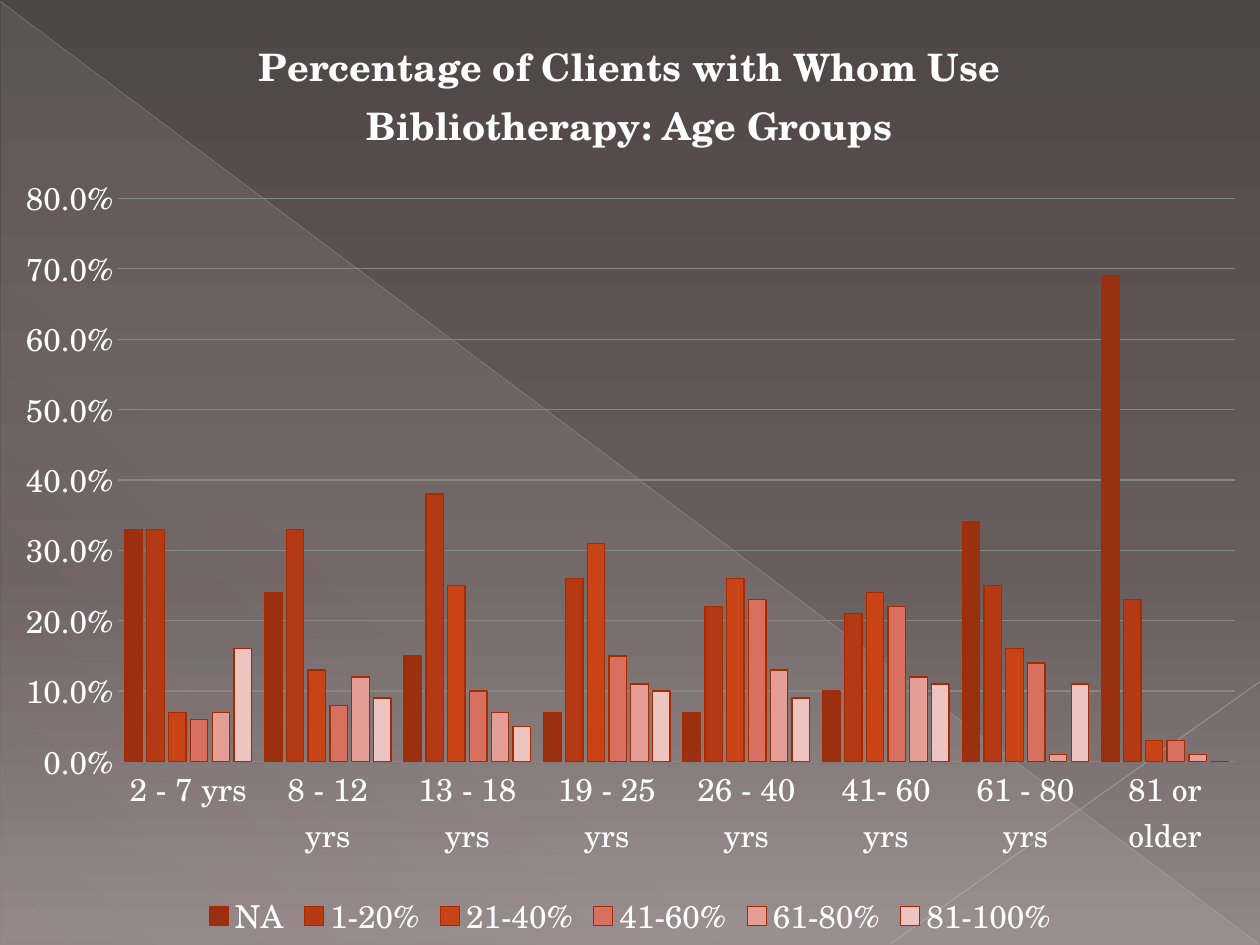
from pptx import Presentation
from pptx.chart.data import CategoryChartData
from pptx.dml.color import RGBColor
from pptx.enum.chart import XL_CHART_TYPE as ChartType, XL_LEGEND_POSITION as LegendPosition, XL_TICK_MARK as TickMark
from pptx.enum.shapes import MSO_CONNECTOR as Connector, MSO_SHAPE as Shape
from pptx.oxml import parse_xml
from pptx.oxml.ns import nsdecls, qn
from pptx.util import Inches, Pt
from lxml.etree import SubElement

FONT = "TeX Gyre Schola"
TITLE = "Percentage of Clients with Whom Use Bibliotherapy: Age Groups"
AGE_GROUPS = ["2 - 7 yrs", "8 - 12 yrs", "13 - 18 yrs", "19 - 25 yrs",
              "26 - 40 yrs", "41- 60 yrs", "61 - 80 yrs", "81 or older"]
CLIENT_SHARES = [
    ("NA", "9B3010", [0.33, 0.24, 0.15, 0.07, 0.07, 0.1, 0.34, 0.69]),
    ("1-20%", "B33A14", [0.33, 0.33, 0.38, 0.26, 0.22, 0.21, 0.25, 0.23]),
    ("21-40%", "C84315", [0.07, 0.13, 0.25, 0.31, 0.26, 0.24, 0.16, 0.03]),
    ("41-60%", "D87060", [0.06, 0.08, 0.1, 0.15, 0.23, 0.22, 0.14, 0.03]),
    ("61-80%", "E49E96", [0.07, 0.12, 0.07, 0.11, 0.13, 0.12, 0.01, 0.01]),
    ("81-100%", "EDC4BF", [0.16, 0.09, 0.05, 0.1, 0.09, 0.11, 0.11, 0]),
]
COLORS = {"text": "FFFFFF", "grid": "8A8684", "bar_edge": "A82A00"}
BACKDROP = [(0, "4F4646", 100), (60, "685D5D", 100), (100, "928787", 100)]
SHEEN = [(0, "E9E5DC", 10), (70, "E9E5DC", 8), (100, "E9E5DC", 1)]
DIAGONALS = [((0, 0.01), (9.99, 7.49), "C1BEBE", 0.39, 35),
             ((10, 5.41), (7.07, 7.49), "C7C5C5", 0.47, 45)]
PLOT_AREA = {"x": 0.094, "y": 0.21, "w": 0.886, "h": 0.596}


def rgb(color):
    return RGBColor.from_string(color)


def gradient_xml(stops, angle):
    marks = "".join(
        f'<a:gs pos="{pos * 1000}"><a:srgbClr val="{color}"><a:alpha val="{alpha * 1000}"/></a:srgbClr></a:gs>'
        for pos, color, alpha in stops)
    return (f'<a:gradFill {nsdecls("a")} rotWithShape="1"><a:gsLst>{marks}</a:gsLst>'
            f'<a:lin ang="{angle * 60000}" scaled="0"/></a:gradFill>')


def add_backdrop(slide):
    slide.background.fill.solid()
    shade = next(slide.element.iter(qn("p:bgPr")))
    shade.replace(shade[0], parse_xml(gradient_xml(BACKDROP, 90)))

    sheen = slide.shapes.add_shape(Shape.RIGHT_TRIANGLE, Inches(0.01), Inches(0.02), Inches(9.99), Inches(7.48))
    sheen.shadow.inherit = False
    sheen.line.fill.background()
    sheen.fill.solid()
    properties = sheen.element.spPr
    properties.replace(properties.find(qn("a:solidFill")), parse_xml(gradient_xml(SHEEN, 133)))

    for start, end, color, width, opacity in DIAGONALS:
        diagonal = slide.shapes.add_connector(Connector.STRAIGHT, *map(Inches, start + end))
        diagonal.line.color.rgb = rgb(color)
        diagonal.line.width = Pt(width)
        properties = diagonal.element.spPr
        tint = next(properties.iter(qn("a:srgbClr")))
        SubElement(tint, qn("a:alpha"), val=str(opacity * 1000))
        SubElement(properties, qn("a:effectLst"))


def style_axes(chart):
    ages, share = chart.category_axis, chart.value_axis
    for axis in (ages, share):
        axis.major_tick_mark = axis.minor_tick_mark = TickMark.NONE
    ages.format.line.color.rgb = rgb(COLORS["grid"])
    share.format.line.fill.background()
    share.minimum_scale, share.maximum_scale, share.major_unit = 0, 0.8, 0.1
    share.tick_labels.number_format = "0.0%"
    share.tick_labels.number_format_is_linked = False
    share.has_major_gridlines = True
    share.major_gridlines.format.line.color.rgb = rgb(COLORS["grid"])
    share.major_gridlines.format.line.width = Pt(0.7)


def place_plot(chart):
    plot_area = next(chart.element.iter(qn("c:plotArea")))
    for old in plot_area.findall(qn("c:layout")):
        plot_area.remove(old)
    sizes = "".join(f'<c:{key} val="{value}"/>' for key, value in PLOT_AREA.items())
    plot_area.insert(0, parse_xml(
        f'<c:layout {nsdecls("c")}><c:manualLayout><c:layoutTarget val="inner"/>'
        f'<c:xMode val="edge"/><c:yMode val="edge"/>{sizes}</c:manualLayout></c:layout>'))


def add_share_chart(slide):
    data = CategoryChartData(number_format="0.0%")
    data.categories = AGE_GROUPS
    for name, _, shares in CLIENT_SHARES:
        data.add_series(name, shares)
    chart = slide.shapes.add_chart(
        ChartType.COLUMN_CLUSTERED, 0, 0, Inches(10), Inches(7.5), data).chart
    chart.font.name, chart.font.size = FONT, Pt(18)
    chart.font.color.rgb = rgb(COLORS["text"])

    chart.has_title = True
    heading = chart.chart_title.text_frame
    heading.text = TITLE
    font = heading.paragraphs[0].runs[0].font
    font.name, font.size, font.bold = FONT, Pt(21.6), True
    font.color.rgb = rgb(COLORS["text"])
    chart.chart_title.include_in_layout = False

    chart.has_legend = True
    chart.legend.position = LegendPosition.BOTTOM
    chart.legend.include_in_layout = False

    plot = chart.plots[0]
    plot.gap_width, plot.overlap, plot.vary_by_categories = 75, -25, False
    for bars, (_, color, _) in zip(plot.series, CLIENT_SHARES):
        bars.format.fill.solid()
        bars.format.fill.fore_color.rgb = rgb(color)
        bars.format.line.color.rgb = rgb(COLORS["bar_edge"])
        bars.format.line.width = Pt(0.75)
    style_axes(chart)
    place_plot(chart)


def main():
    """Build the slide on bibliotherapy use by client age group."""
    deck = Presentation()
    deck.slide_width, deck.slide_height = Inches(10), Inches(7.5)
    slide = deck.slides.add_slide(deck.slide_layouts[6])
    add_backdrop(slide)
    add_share_chart(slide)
    deck.save("out.pptx")


if __name__ == "__main__":
    main()
